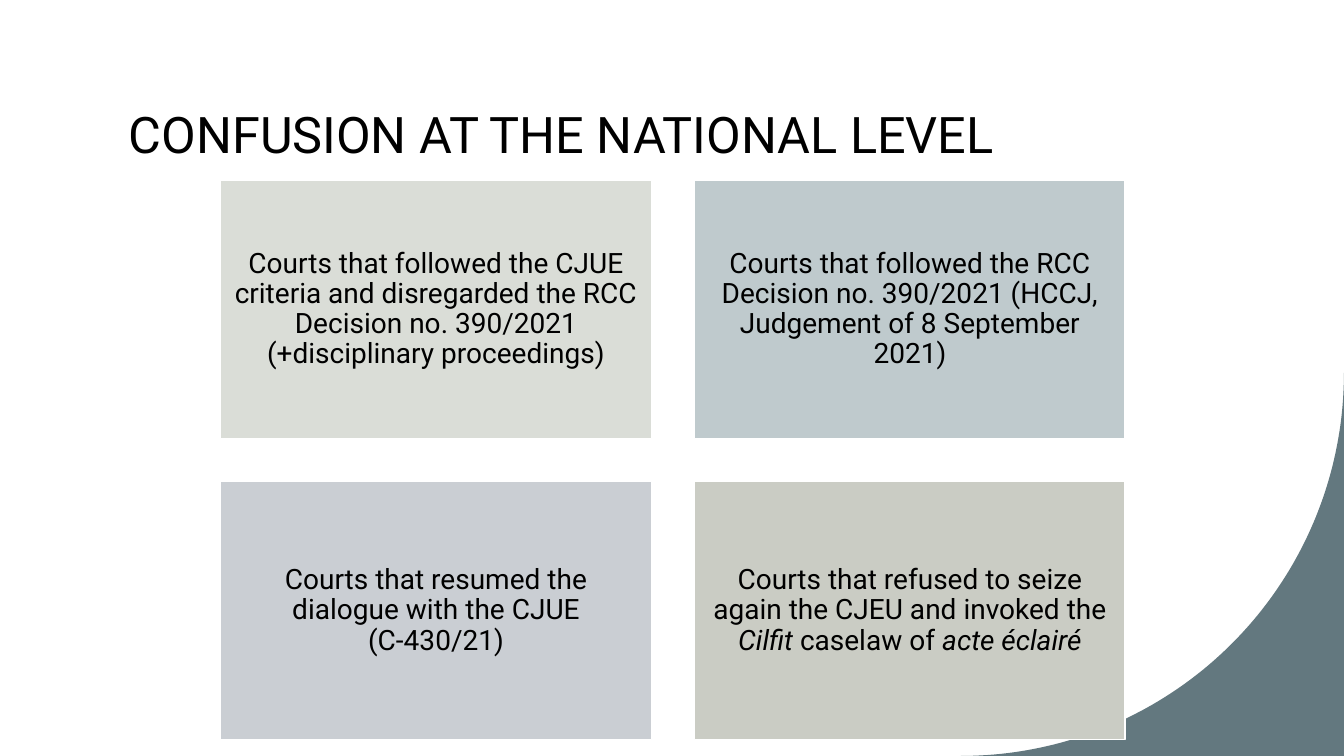
"""Build a slide with a title, four cards of court responses and a curved corner."""
from dataclasses import dataclass
from math import cos, pi, sin

from pptx import Presentation
from pptx.dml.color import RGBColor
from pptx.enum.shapes import MSO_SHAPE
from pptx.enum.text import MSO_ANCHOR, PP_ALIGN
from pptx.util import Inches, Pt

BLACK = RGBColor(0x00, 0x00, 0x00)
WHITE = RGBColor(0xFF, 0xFF, 0xFF)
SLATE = RGBColor(0x63, 0x78, 0x7F)
SAGE = RGBColor(0xDA, 0xDD, 0xD7)
MIST = RGBColor(0xBF, 0xCA, 0xCD)
LILAC = RGBColor(0xCA, 0xCE, 0xD3)
STONE = RGBColor(0xCA, 0xCC, 0xC4)

FONT = "Roboto"
WIDTH, HEIGHT = 13.33, 7.5
LEFT, TOP = 2.19, 1.79
CARD_W, CARD_H = 4.27, 2.56
STEP_X, STEP_Y = 4.7, 2.99
RADIUS = 3.8
STEPS = 90


@dataclass
class Card:
    fill: RGBColor
    words: list[str]


CARDS = [
    Card(SAGE, ["Courts that followed the CJUE criteria and disregarded the RCC "
                "Decision no. 390/2021 (+disciplinary proceedings)"]),
    Card(MIST, ["Courts that followed the RCC Decision no. 390/2021 (HCCJ, "
                "Judgement of 8 September 2021)"]),
    Card(LILAC, ["Courts that resumed the dialogue with the CJUE (C-430/21)"]),
    Card(STONE, ["Courts that refused to seize again the CJEU and invoked the ",
                 "Cilfit ", "caselaw of ", "acte éclairé"]),
]


def style(run, size: int, slant: bool = False) -> None:
    run.font.name = FONT
    run.font.size = Pt(size)
    run.font.italic = slant
    run.font.color.rgb = BLACK


def draw_corner(slide) -> None:
    mid_x, mid_y = WIDTH - RADIUS, HEIGHT - RADIUS
    turns = [i * pi / 2 / STEPS for i in range(STEPS + 1)]
    arc = [(Inches(mid_x + RADIUS * cos(t)), Inches(mid_y + RADIUS * sin(t)))
           for t in turns]
    pen = slide.shapes.build_freeform(Inches(WIDTH), Inches(HEIGHT))
    pen.add_line_segments(arc, close=True)
    corner = pen.convert_to_shape()
    corner.shadow.inherit = False
    corner.fill.solid()
    corner.fill.fore_color.rgb = SLATE
    corner.line.fill.background()


def draw_title(slide) -> None:
    box = slide.shapes.add_textbox(Inches(1.18), Inches(0.79), Inches(10.88), Inches(0.88))
    frame = box.text_frame
    frame.word_wrap = True
    frame.vertical_anchor = MSO_ANCHOR.BOTTOM
    frame.text = "CONFUSION AT THE NATIONAL LEVEL"
    line = frame.paragraphs[0]
    line.line_spacing = 1.1
    style(line.runs[0], 36)


def draw_card(slide, card: Card, row: int, col: int) -> None:
    box = slide.shapes.add_shape(
        MSO_SHAPE.RECTANGLE, Inches(LEFT + col * STEP_X), Inches(TOP + row * STEP_Y),
        Inches(CARD_W), Inches(CARD_H))
    box.shadow.inherit = False
    box.fill.solid()
    box.fill.fore_color.rgb = card.fill
    box.line.color.rgb = WHITE
    box.line.width = Pt(1)
    frame = box.text_frame
    frame.word_wrap = True
    frame.vertical_anchor = MSO_ANCHOR.MIDDLE
    frame.margin_left = frame.margin_right = Inches(0.08)
    frame.margin_top = frame.margin_bottom = Inches(0.08)
    line = frame.paragraphs[0]
    line.alignment = PP_ALIGN.CENTER
    line.line_spacing = 0.9
    for i, words in enumerate(card.words):
        run = line.add_run()
        run.text = words
        style(run, 20, slant=i % 2 == 1)


def main() -> None:
    deck = Presentation()
    deck.slide_width, deck.slide_height = Inches(WIDTH), Inches(HEIGHT)
    slide = deck.slides.add_slide(deck.slide_layouts[6])
    draw_corner(slide)
    draw_title(slide)
    for i, card in enumerate(CARDS):
        draw_card(slide, card, *divmod(i, 2))
    deck.save("out.pptx")


if __name__ == "__main__":
    main()
